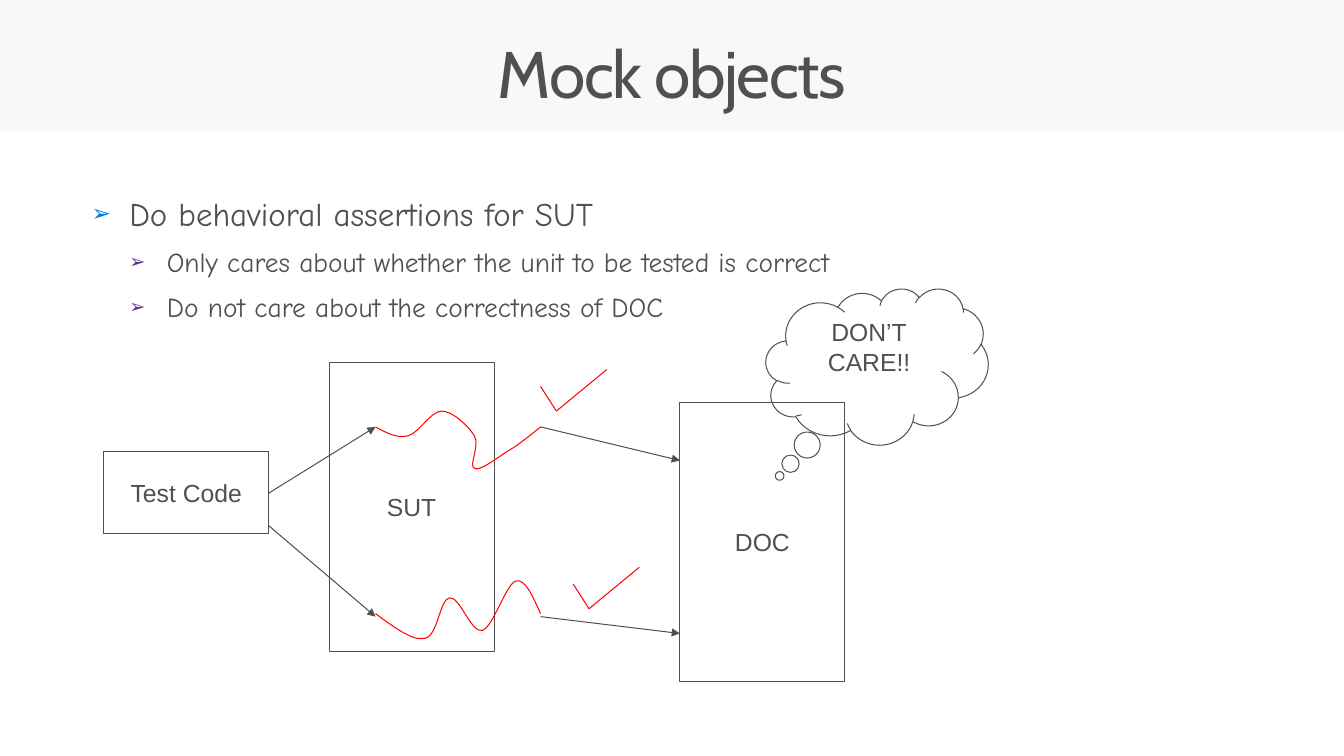
import pptx
import pptx.util
import pptx.dml.color
import pptx.enum.shapes
import pptx.enum.text
import pptx.oxml
import pptx.oxml.ns
from lxml import etree

Inches, Pt = pptx.util.Inches, pptx.util.Pt
KIND = pptx.enum.shapes.MSO_SHAPE
ALIGN = pptx.enum.text.PP_ALIGN
MIDDLE = pptx.enum.text.MSO_ANCHOR.MIDDLE
TOP = pptx.enum.text.MSO_ANCHOR.TOP

# Content
INK, RED = "505050", "FF0000"
WIDE, HIGH, BAND = 13.6, 7.65, 1.33
TITLE = "Mock objects"
POINTS = [
    (0, "Do behavioral assertions for SUT"),
    (1, "Only cares about whether the unit to be tested is correct"),
    (1, "Do not care about the correctness of DOC"),
]
LEVELS = [("0078D7", 24), ("5C2D91", 20)]  # bullet colour, text size
STEP = 0.38
BOXES = [
    ("Test Code", 1.05, 4.57, 0.83),
    ("SUT", 3.33, 3.67, 2.92),
    ("DOC", 6.88, 4.07, 2.83),
]
BOX_W = 1.67
ARROWS = [
    (2.72, 4.99, 3.8, 4.32),
    (5.47, 4.32, 6.88, 4.66),
    (2.72, 5.32, 3.8, 6.24),
    (5.47, 6.24, 6.88, 6.41),
]
# Start point, then two handles and an end point for each bend
WAVES = [
    [(3.8, 4.32), (3.91, 4.38), (4.02, 4.44), (4.13, 4.41),
     (4.24, 4.38), (4.36, 4.16), (4.47, 4.16),
     (4.58, 4.16), (4.74, 4.31), (4.8, 4.41),
     (4.86, 4.51), (4.74, 4.71), (4.8, 4.74),
     (4.86, 4.77), (5.02, 4.64), (5.13, 4.57),
     (5.24, 4.51), (5.41, 4.37), (5.47, 4.32)],
    [(3.8, 6.21), (3.99, 6.35), (4.18, 6.49), (4.3, 6.46),
     (4.43, 6.44), (4.45, 6.06), (4.55, 6.05),
     (4.65, 6.03), (4.77, 6.41), (4.88, 6.38),
     (4.99, 6.35), (5.12, 5.91), (5.22, 5.88),
     (5.31, 5.85), (5.39, 6.03), (5.47, 6.21)],
]
TICKS = [(5.47, 3.91), (5.8, 5.91)]
CLOUD = (["DON’T", "CARE!!"], (7.75, 2.92, 2.25, 1.58), (-0.438, 0.7))

show = pptx.Presentation()
show.slide_width, show.slide_height = Inches(WIDE), Inches(HIGH)
slide = show.slides.add_slide(show.slide_layouts[6])
shapes = slide.shapes


def color(code):
    return pptx.dml.color.RGBColor.from_string(code)


def assign(thing, values):
    for name, value in values.items():
        setattr(thing, name, value)


def add_node(root, tag, **values):
    return etree.SubElement(root, pptx.oxml.ns.qn("a:" + tag), values)


def write(part, text, face, size, **form):
    run = part.add_run()
    run.text = text
    assign(run.font, {"name": face, "size": Pt(size)})
    run.font.color.rgb = color(INK)
    assign(part, form)
    return run


def stroke(shape, code):
    shape.line.color.rgb = color(code)
    shape.line.width = Pt(0.75)


def add_box(kind, place, lines, wrap, anchor):
    box = shapes.add_shape(kind, *map(Inches, place))
    box.shadow.inherit = False
    box.fill.background()
    stroke(box, INK)
    frame = box.text_frame
    assign(frame, {"word_wrap": wrap, "vertical_anchor": anchor})
    for i, text in enumerate(lines):
        part = frame.add_paragraph() if i else frame.paragraphs[0]
        write(part, text, "Arial", 18, alignment=ALIGN.CENTER)
    return box


def add_line(ends, code, arrow=False):
    kind = pptx.enum.shapes.MSO_CONNECTOR.STRAIGHT
    line = shapes.add_connector(kind, *map(Inches, ends))
    stroke(line, code)
    if arrow:
        add_node(line.line._get_or_add_ln(), "tailEnd", type="triangle")
    add_node(line._element.spPr, "effectLst")


def add_wave(points):
    spots = [(Inches(x), Inches(y)) for x, y in points]
    pen = shapes.build_freeform(*spots[0])
    pen.add_line_segments(spots[1:], close=False)
    wave = pen.convert_to_shape()
    wave.shadow.inherit = False
    wave.fill.background()
    stroke(wave, RED)
    # Each three straight legs become one curve
    legs = list(wave._element.iter(pptx.oxml.ns.qn("a:lnTo")))
    root = legs[0].getparent()
    for i in range(0, len(legs), 3):
        curve = add_node(root, "cubicBezTo")
        for leg in legs[i:i + 3]:
            curve.append(leg[0])
            root.remove(leg)


# Backdrop
slide.background.fill.solid()
slide.background.fill.fore_color.rgb = color("F8F8F8")
page = shapes.add_shape(KIND.RECTANGLE, 0, Inches(BAND), Inches(WIDE), Inches(HIGH - BAND))
page.shadow.inherit = False
page.fill.solid()
page.fill.fore_color.rgb = color("FFFFFF")
page.line.fill.background()

# Title
frame = shapes.add_textbox(*map(Inches, (0.3, 0.32, 13, 1))).text_frame
assign(frame, {
    "word_wrap": True,
    "margin_left": Inches(0.16), "margin_right": Inches(0.16),
    "margin_top": Inches(0.1), "margin_bottom": Inches(0.1),
})
head = write(frame.paragraphs[0], TITLE, "Cabin", 48, alignment=ALIGN.CENTER, line_spacing=0.9)
head.font._element.set("spc", "-100")

# Bullet points
frame = shapes.add_textbox(*map(Inches, (0.83, 1.83, 8.58, 5.42))).text_frame
frame.word_wrap = True
for i, (level, text) in enumerate(POINTS):
    part = frame.add_paragraph() if i else frame.paragraphs[0]
    tint, size = LEVELS[level]
    props = part._p.get_or_add_pPr()
    props.set("marL", str(Inches(STEP * (level + 1))))
    props.set("indent", str(-Inches(STEP)))
    if i:
        add_node(add_node(props, "spcBef"), "spcPct", val="20000")
    add_node(add_node(props, "buClr"), "srgbClr", val=tint)
    add_node(props, "buSzPct", val="70000")
    add_node(props, "buFont", typeface="Arial")
    add_node(props, "buChar", char="➢")
    write(part, text, "Comic Neue", size, level=level, line_spacing=1.2)

# Boxes, arrows and waves
for text, left, top, tall in BOXES:
    add_box(KIND.RECTANGLE, (left, top, BOX_W, tall), [text], False, MIDDLE)
for ends in ARROWS:
    add_line(ends, INK, arrow=True)
for points in WAVES:
    add_wave(points)

# Check marks
for x, y in TICKS:
    low = (x + 0.16, y + 0.25)
    add_line((x, y, *low), RED)
    add_line((*low, x + 0.67, y - 0.17), RED)

# Thought cloud
lines, place, tip = CLOUD
cloud = add_box(KIND.CLOUD_CALLOUT, place, lines, True, TOP)
for i, value in enumerate(tip):
    cloud.adjustments[i] = value

show.save("out.pptx")
